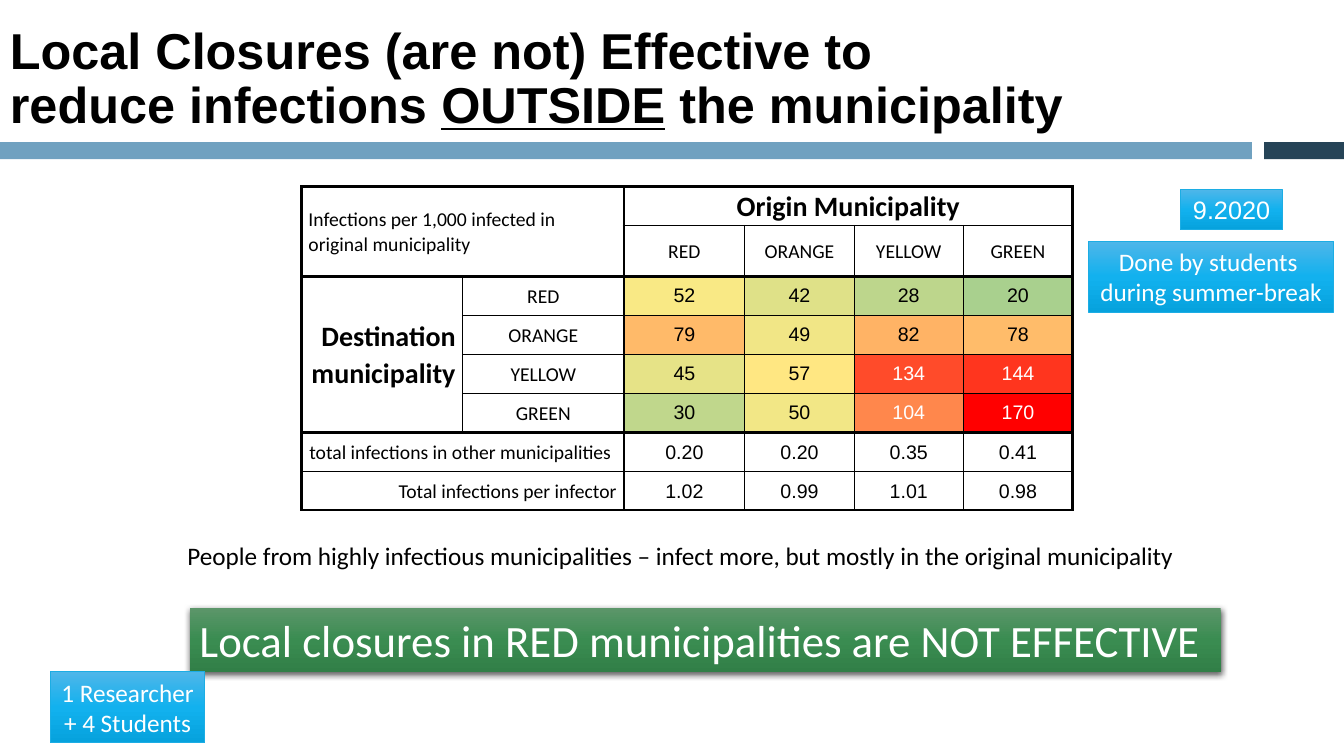
from lxml import etree
from pptx import Presentation, oxml, util as u
from pptx.dml import color
from pptx.enum import shapes, text
from pptx.oxml import ns

COLORS = {
    "black": "000000", "white": "FFFFFF", "bar": "70A1C0", "bar_end": "264457",
    "note_line": "1CADE4",
}
GRADIENTS = {
    "blue": ("4FB6E9", "12B1EE", "06A2DD"),
    "green": ("5C966A", "3A8C51", "317F47"),
}
ZONES = ("RED", "ORANGE", "YELLOW", "GREEN")
INFECTIONS = (  # rows: destination, columns: origin, each with its heat colour
    ((52, "F9E985"), (42, "DFE188"), (28, "BDD68C"), (20, "A9D08E")),
    ((79, "FFBA69"), (49, "F1E686"), (82, "FFB365"), (78, "FFBC6A")),
    ((45, "E6E387"), (57, "FFE782"), (134, "FF4B2A"), (144, "FF351E")),
    ((30, "C0D78C"), (50, "F2E786"), (104, "FF874C"), (170, "FF0000")),
)
TOTALS = (
    (" total infections in other municipalities", ("0.20", "0.20", "0.35", "0.41")),
    ("Total infections per infector ", ("1.02", "0.99", "1.01", "0.98")),
)
COLUMN_WIDTHS = (12, 12, 9, 8.13, 8.13, 8.13)
ROW_COUNT = 8
THICK_COLUMN_EDGES = {0, 2, 6}
THICK_ROW_EDGES = {0, 2, 6, 8}
LEFT, CENTER, RIGHT = text.PP_ALIGN.LEFT, text.PP_ALIGN.CENTER, text.PP_ALIGN.RIGHT


def rgb(value):
    return color.RGBColor.from_string(COLORS.get(value, value))


class Deck:
    """Style and current slide; positions are columns and rows of a 100 by 100 grid."""

    def __init__(self):
        self.prs = Presentation()
        self.prs.slide_width, self.prs.slide_height = u.Inches(13.33), u.Inches(7.5)
        self.s = self.prs.slides.add_slide(self.prs.slide_layouts[6])

    def x(self, columns):
        return int(self.prs.slide_width * columns / 100)

    def y(self, rows):
        return int(self.prs.slide_height * rows / 100)

    def box(self, left, top, width, height):
        return self.x(left), self.y(top), self.x(width), self.y(height)

    def run(self, p, content, size, fill="black", font="Calibri", bold=False, underline=False):
        r = p.add_run()
        r.text = content
        r.font.size, r.font.name = u.Pt(size), font
        r.font.bold, r.font.underline = bold, underline
        r.font.color.rgb = rgb(fill)
        return r

    def right_to_left(self, p):
        """Set the paragraph right to left, with Arial for its digits."""
        p._p.get_or_add_pPr().set("rtl", "1")
        for r in p.runs:
            cs = etree.SubElement(r._r.get_or_add_rPr(), ns.qn("a:cs"))
            cs.set("typeface", "Arial")

    def text_box(self, *place):
        tf = self.s.shapes.add_textbox(*self.box(*place)).text_frame
        tf.word_wrap = True
        return tf

    def rectangle(self, *place):
        sp = self.s.shapes.add_shape(shapes.MSO_SHAPE.RECTANGLE, *self.box(*place))
        sp.shadow.inherit = False
        sp.line.fill.background()
        return sp

    def bar(self, fill, *place):
        sp = self.rectangle(*place)
        sp.fill.solid()
        sp.fill.fore_color.rgb = rgb(fill)

    def panel(self, place, lines, gradient, size, align=CENTER):
        sp = self.rectangle(*place)
        sp.fill.gradient()
        sp.fill.gradient_angle = 270
        stops = sp._element.spPr.find(".//" + ns.qn("a:gsLst"))
        stops[:] = []
        for i, value in enumerate(GRADIENTS[gradient]):
            stop = etree.SubElement(stops, ns.qn("a:gs"), pos=str(i * 50000))
            etree.SubElement(stop, ns.qn("a:srgbClr"), val=value)
        tf = sp.text_frame
        tf.word_wrap = align == LEFT
        for i, line in enumerate(lines):
            p = tf.add_paragraph() if i else tf.paragraphs[0]
            p.alignment = align
            self.run(p, line, size, "white")
        return sp

    def note(self, place, *lines):
        sp = self.panel(place, lines, "blue", 18)
        sp.line.color.rgb = rgb("note_line")
        sp.line.width = u.Pt(0.5)
        return sp

    def banner(self, place, line):
        sp = self.panel(place, [line], "green", 32, LEFT)
        sp._element.spPr.find(ns.qn("a:effectLst")).append(oxml.parse_xml(
            f'<a:outerShdw {ns.nsdecls("a")} blurRad="{u.Pt(4.5)}" dist="{u.Pt(1.5)}" '
            'dir="5400000" rotWithShape="0"><a:srgbClr val="000000">'
            '<a:alpha val="63000"/></a:srgbClr></a:outerShdw>'))

    def table(self, left, top, height):
        frame = self.s.shapes.add_table(
            ROW_COUNT, len(COLUMN_WIDTHS), *self.box(left, top, sum(COLUMN_WIDTHS), height))
        t = frame.table
        t.first_row = t.horz_banding = False
        for column, width in zip(t.columns, COLUMN_WIDTHS):
            column.width = self.x(width)
        for row in t.rows:
            row.height = self.y(height / ROW_COUNT)
        return t

    def cell(self, t, row, col, content, rows=1, cols=1, align=CENTER, rtl=True,
             size=14, bold=False, inset=0.07, spacing=1.07, fill=None, font_fill="black"):
        c = t.cell(row, col)
        if rows * cols > 1:
            c.merge(t.cell(row + rows - 1, col + cols - 1))
        c.vertical_anchor = text.MSO_ANCHOR.MIDDLE
        c.margin_left = c.margin_right = u.Inches(inset)
        c.margin_top = c.margin_bottom = 0
        p = c.text_frame.paragraphs[0]
        p.alignment, p.line_spacing = align, spacing
        self.run(p, content, size, font_fill, bold=bold)
        if rtl:
            self.right_to_left(p)
        if fill:
            c.fill.solid()
            c.fill.fore_color.rgb = rgb(fill)
        else:
            c.fill.background()
        for r in range(row, row + rows):
            for k in range(col, col + cols):
                self.borders(t.cell(r, k), (col, col + cols), (row, row + rows))

    def borders(self, c, column_edges, row_edges):
        thick = [edge in THICK_COLUMN_EDGES for edge in column_edges]
        thick += [edge in THICK_ROW_EDGES for edge in row_edges]
        for i, (side, heavy) in enumerate(zip("LRTB", thick)):
            c._tc.get_or_add_tcPr().insert(i, oxml.parse_xml(
                f'<a:ln{side} {ns.nsdecls("a")} w="{u.Pt(2.25 if heavy else 1)}"><a:solidFill>'
                f'<a:srgbClr val="{COLORS["black"]}"/></a:solidFill></a:ln{side}>'))


def infection_table(d):
    t = d.table(22.43, 24.67, 41.2)
    d.cell(t, 0, 0, "Infections per 1,000 infected in original municipality",
           rows=2, cols=2, align=LEFT, rtl=False)
    d.cell(t, 0, 2, "Origin Municipality", cols=4, rtl=False, size=20, bold=True)
    d.cell(t, 2, 0, "Destination municipality", rows=4, align=RIGHT, size=20, bold=True)
    for i, zone in enumerate(ZONES):
        d.cell(t, 1, 2 + i, zone, rtl=False)
        d.cell(t, 2 + i, 1, zone)
        for j, (count, heat) in enumerate(INFECTIONS[i]):
            d.cell(t, 2 + i, 2 + j, str(count), inset=0.01, spacing=1, fill=heat,
                   font_fill="white" if count > 100 else "black")
    for i, (label, values) in enumerate(TOTALS):
        d.cell(t, 6 + i, 0, label, cols=2, align=RIGHT)
        for j, value in enumerate(values):
            d.cell(t, 6 + i, 2 + j, value, inset=0.01)


def main():
    d = Deck()
    d.bar("bar", 0, 18.8, 93.15, 2.27)
    d.bar("bar_end", 94.05, 18.8, 5.95, 2.27)
    infection_table(d)

    caption = d.text_box(13.2, 70.8, 81.4, 5.33)
    d.run(caption.paragraphs[0], "People from highly infectious municipalities – infect more, "
          "but mostly in the original municipality", 18)

    title = d.text_box(0, 0.93, 93.45, 19.33)
    title.vertical_anchor = text.MSO_ANCHOR.MIDDLE
    p = title.paragraphs[0]
    p.line_spacing = 0.9
    style = {"size": 36, "font": "Arial", "bold": True}
    d.run(p, "Local Closures (are not) Effective to ", **style)
    p.add_line_break()
    d.run(p, "reduce infections ", **style)
    d.run(p, "OUTSIDE", underline=True, **style)
    d.run(p, " the municipality", **style)

    date = d.note((87.83, 25.07, 7.6, 5.33), "9.2020")
    d.right_to_left(date.text_frame.paragraphs[0])
    d.banner((14.1, 80.4, 76.73, 8.53), "Local closures in RED municipalities are NOT EFFECTIVE")
    d.note((81, 31.87, 18.23, 9.47), "Done by students ", "during summer-break")
    d.note((3.75, 88.8, 11.48, 9.47), "1 Researcher", "+ 4 Students")
    d.prs.save("out.pptx")


if __name__ == "__main__":
    main()
